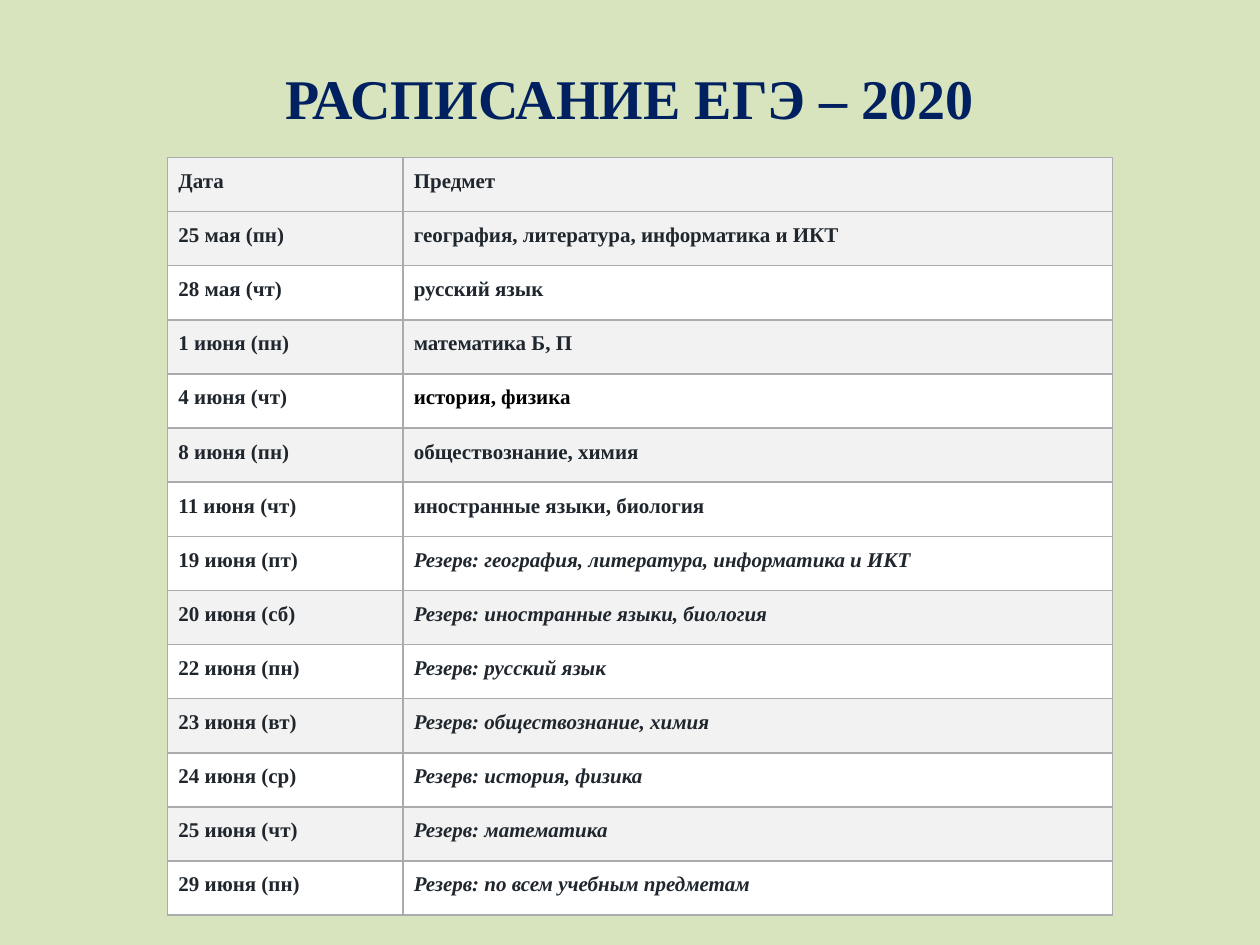
from lxml.etree import SubElement
from pptx import Presentation
from pptx.dml.color import RGBColor
from pptx.enum.text import MSO_ANCHOR, PP_ALIGN
from pptx.oxml.ns import qn
from pptx.util import Pt

COLOURS = {
    "background": "D7E4BD",
    "title": "002060",
    "text": "1F262D",
    "black": "000000",
    "grey": "F2F2F2",
    "white": "FFFFFF",
    "border": "A9ABAD",
}

SCHEDULE = [
    ("Дата", "Предмет", "grey"),
    ("25 мая (пн)", "география, литература, информатика и ИКТ", "grey"),
    ("28 мая (чт)", "русский язык", "white"),
    ("1 июня (пн)", "математика Б, П", "grey"),
    ("4 июня (чт)", "история, физика", "white"),
    ("8 июня (пн)", "обществознание, химия", "grey"),
    ("11 июня (чт)", "иностранные языки, биология", "white"),
    ("19 июня (пт)", "Резерв: география, литература, информатика и ИКТ", "white"),
    ("20 июня (сб)", "Резерв: иностранные языки, биология", "grey"),
    ("22 июня (пн)", "Резерв: русский язык", "white"),
    ("23 июня (вт)", "Резерв: обществознание, химия", "grey"),
    ("24 июня (ср)", "Резерв: история, физика", "white"),
    ("25 июня (чт)", "Резерв: математика", "grey"),
    ("29 июня (пн)", "Резерв: по всем учебным предметам", "white"),
]


class SchedulePage:
    """Holds the style and the current slide of the exam schedule."""

    font = "Times New Roman"

    def __init__(self, deck):
        self.page = deck.slides.add_slide(deck.slide_layouts[6])
        self.paint(self.page.background.fill, "background")

    def paint(self, fill, colour):
        fill.solid()
        fill.fore_color.rgb = RGBColor.from_string(COLOURS[colour])

    def span(self, para, text, size, colour, italic=False):
        span = para.add_run()
        span.text = text
        span.font.name = self.font
        span.font.size = Pt(size)
        span.font.bold = True
        span.font.italic = italic
        span.font.color.rgb = RGBColor.from_string(COLOURS[colour])

    def title(self, text, left, top, width, height):
        box = self.page.shapes.add_textbox(Pt(left), Pt(top), Pt(width), Pt(height))
        frame = box.text_frame
        frame.word_wrap = True
        frame.vertical_anchor = MSO_ANCHOR.TOP
        frame.margin_top = Pt(8.5)
        para = frame.paragraphs[0]
        para.alignment = PP_ALIGN.CENTER
        self.span(para, text, 32, "title")

    def borders(self, cell):
        properties = cell._tc.get_or_add_tcPr()
        for index, side in enumerate(("a:lnL", "a:lnR", "a:lnT", "a:lnB")):
            line = SubElement(properties, qn(side), w=str(Pt(1)))
            properties.insert(index, line)
            fill = SubElement(line, qn("a:solidFill"))
            SubElement(fill, qn("a:srgbClr"), val=COLOURS["border"])

    def cell(self, cell, text, fill):
        self.paint(cell.fill, fill)
        self.borders(cell)
        cell.margin_left = cell.margin_right = Pt(6.25)
        cell.margin_top = cell.margin_bottom = Pt(5)
        para = cell.text_frame.paragraphs[0]
        para.line_spacing = 1.15
        colour = "black" if text == "история, физика" else "text"
        self.span(para, text, 12, colour, text.startswith("Резерв"))

    def table(self, rows, left, top, widths, row_height):
        frame = self.page.shapes.add_table(
            len(rows), len(widths), Pt(left), Pt(top),
            Pt(sum(widths)), Pt(row_height * len(rows)))
        table = frame.table
        table.first_row = table.horz_banding = False
        for column, width in zip(table.columns, widths):
            column.width = Pt(width)
        for row, (date, subject, fill) in zip(table.rows, rows):
            row.height = Pt(row_height)
            for cell, text in zip(row.cells, (date, subject)):
                self.cell(cell, text, fill)


deck = Presentation()
deck.slide_width, deck.slide_height = Pt(720), Pt(540)
schedule = SchedulePage(deck)
schedule.title("РАСПИСАНИЕ ЕГЭ – 2020", 22.5, 28, 675, 85)
schedule.table(SCHEDULE, 95.75, 90, (134.5, 405.5), 30.95)
deck.save("out.pptx")
